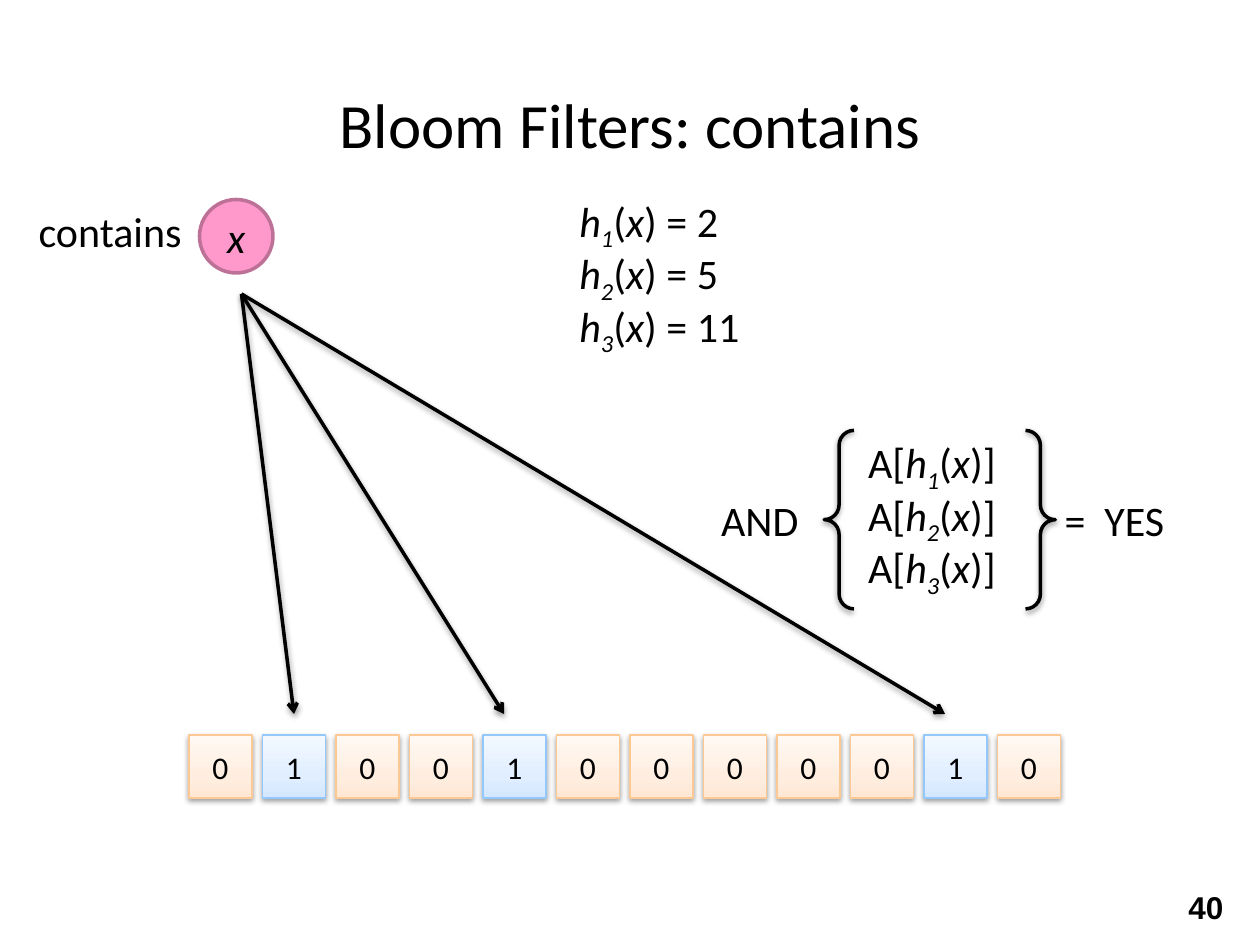
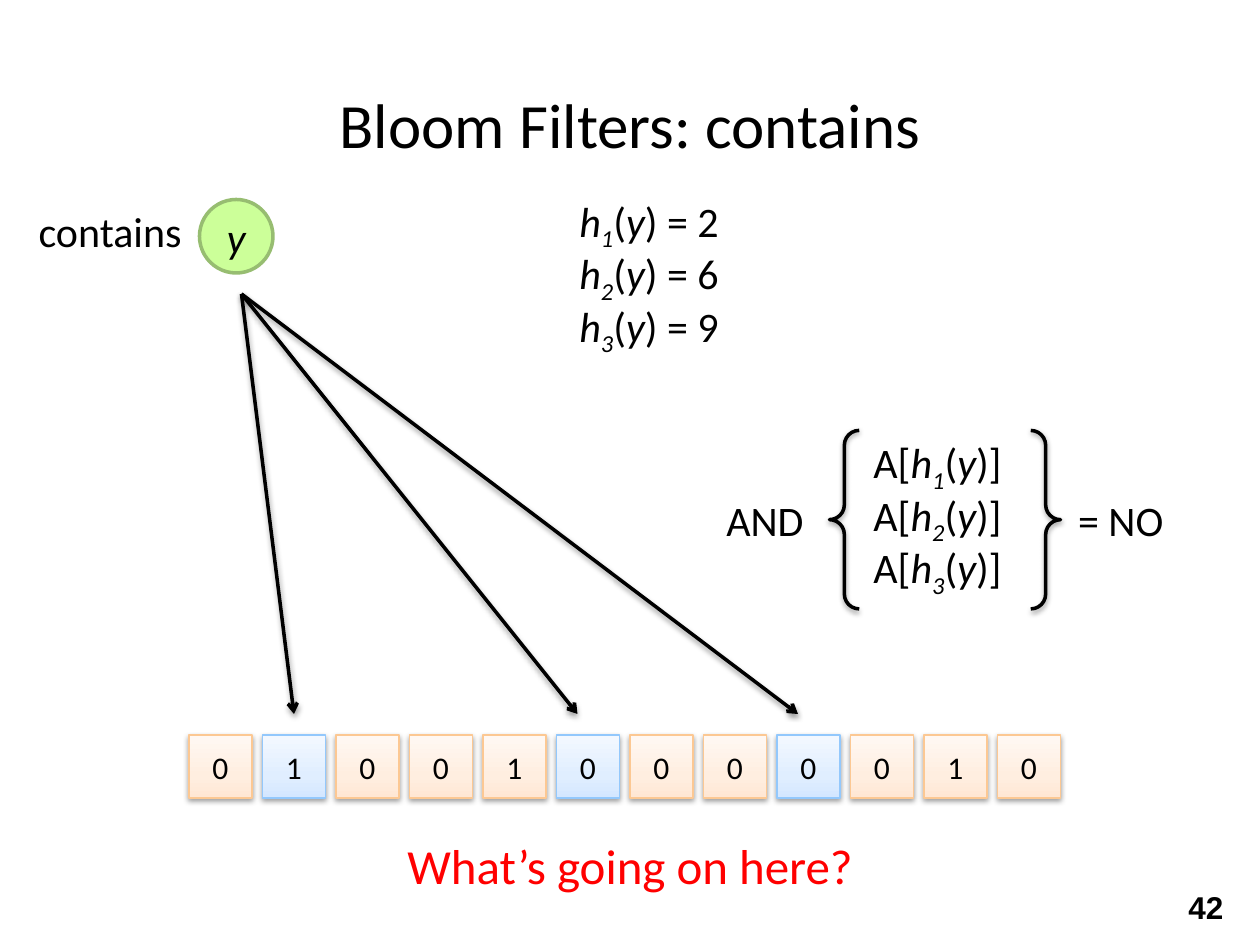
from pptx import Presentation
from pptx import util as u
from pptx.dml.color import RGBColor
from pptx.enum import shapes, text
from pptx.oxml import parse_xml
from pptx.oxml.ns import nsdecls

# The slide is a grid of 120 columns and 90 rows, each a twelfth of an inch.
COLUMNS, ROWS = 120, 90
UNIT = u.Inches(10) // COLUMNS

BLACK = RGBColor(0x00, 0x00, 0x00)
RED = RGBColor(0xFF, 0x00, 0x00)
PINK = RGBColor(0xFF, 0x99, 0xCC)
PINK_EDGE = RGBColor(0xBD, 0x71, 0x97)
LIME = RGBColor(0xCC, 0xFF, 0x99)
LIME_EDGE = RGBColor(0x97, 0xBD, 0x71)
ORANGE_EDGE = RGBColor(0xFC, 0xC8, 0x93)
BLUE_EDGE = RGBColor(0x93, 0xC8, 0xFC)
ORANGE_TINTS = [RGBColor(0xFF, 0xE7, 0xD4), RGBColor(0xFF, 0xEE, 0xE0), RGBColor(0xFF, 0xF8, 0xF3)]
BLUE_TINTS = [RGBColor(0xD4, 0xE7, 0xFF), RGBColor(0xE0, 0xEE, 0xFF), RGBColor(0xF3, 0xF8, 0xFF)]
TINT_STOPS = [0, 35, 100]

CENTER = text.PP_ALIGN.CENTER
MIDDLE = text.MSO_ANCHOR.MIDDLE
BITS = "010010000010"


def grid(*counts):
    return [u.Emu(round(count * UNIT)) for count in counts]


def write(frame, spans, size=24, font="Calibri", color=BLACK, bold=False,
          align=None, anchor=None, tabs=()):
    """Fill a frame with one paragraph; a span is (words, style), style "i" italic, "s" subscript."""
    frame.word_wrap = True
    if anchor is not None:
        frame.vertical_anchor = anchor
    para = frame.paragraphs[0]
    para.alignment = align
    if tabs:
        stops = "".join(f'<a:tab pos="{stop}" algn="l"/>' for stop in grid(*tabs))
        para._p.get_or_add_pPr().append(parse_xml(f'<a:tabLst {nsdecls("a")}>{stops}</a:tabLst>'))
    for words, style in [(spans, "")] if isinstance(spans, str) else spans:
        span = para.add_run()
        span.text = words
        span.font.size = u.Pt(size)
        span.font.name = font
        span.font.bold = bold
        span.font.italic = style in ("i", "s")
        span.font.color.rgb = color
        if style == "s":
            span.font._element.set("baseline", "-25000")


def add_text(page, box, spans, **style):
    write(page.shapes.add_textbox(*grid(*box)).text_frame, spans, **style)


def set_line(shape, color, width):
    shape.line.color.rgb = color
    shape.line.width = u.Pt(width)


def cast_shadow(shape):
    shape._element.spPr.append(parse_xml(
        f'<a:effectLst {nsdecls("a")}><a:outerShdw blurRad="40000" dist="20000" dir="5400000" '
        'rotWithShape="0"><a:srgbClr val="000000"><a:alpha val="38000"/></a:srgbClr>'
        '</a:outerShdw></a:effectLst>'))


def fill_upwards(shape, tints):
    """Give a shape a gradient that runs from its bottom edge to its top."""
    stops = "".join(f'<a:gs pos="{stop * 1000}"><a:srgbClr val="{tint}"/></a:gs>'
                    for stop, tint in zip(TINT_STOPS, tints))
    shape._element.spPr.append(parse_xml(
        f'<a:gradFill rotWithShape="1" {nsdecls("a")}><a:gsLst>{stops}</a:gsLst>'
        '<a:lin ang="16200000" scaled="0"/></a:gradFill>'))


def hash_call(number, key):
    return [("h", "i"), (str(number), "s"), ("(", ""), (key, "i")]


def add_bit_array(page, left, top, probed, side=6, pitch=7):
    for index, bit in enumerate(BITS):
        box = grid(left + index * pitch, top, side, side)
        cell = page.shapes.add_shape(shapes.MSO_SHAPE.RECTANGLE, *box)
        hit = index + 1 in probed
        fill_upwards(cell, BLUE_TINTS if hit else ORANGE_TINTS)
        set_line(cell, BLUE_EDGE if hit else ORANGE_EDGE, 0.75)
        cast_shadow(cell)
        write(cell.text_frame, bit, size=18, align=CENTER, anchor=MIDDLE)


def add_query(page, left, top, key, fill, edge):
    ball = page.shapes.add_shape(shapes.MSO_SHAPE.OVAL, *grid(left + 17, top, 7, 7))
    ball.shadow.inherit = False
    ball.fill.solid()
    ball.fill.fore_color.rgb = fill
    set_line(ball, edge, 2)
    write(ball.text_frame, [(key, "i")], align=CENTER, anchor=MIDDLE)
    add_text(page, (left, top, 17, 6), "contains", align=CENTER)


def add_hash_values(page, left, top, key, values):
    for number, value in enumerate(values, 1):
        add_text(page, (left, top + 5 * (number - 1), 19, 6),
                 hash_call(number, key) + [(f") = {value}", "")])


def add_probe_arrows(page, left, top, tips, bottom):
    for tip in tips:
        arrow = page.shapes.add_connector(shapes.MSO_CONNECTOR.STRAIGHT,
                                          *grid(left, top, tip, bottom))
        set_line(arrow, BLACK, 2)
        arrow.line._get_or_add_ln().append(parse_xml(f'<a:tailEnd type="arrow" {nsdecls("a")}/>'))
        cast_shadow(arrow)


def add_verdict(page, left, top, key, answer, tabs):
    """Show the AND of the probed bits, in braces, and its answer."""
    add_text(page, (left, top + 5.5, 47, 6), f"AND\t{answer}", tabs=tabs)
    brace = page.shapes.add_shape(shapes.MSO_SHAPE.DOUBLE_BRACE, *grid(left + 11, top, 22, 17))
    brace.fill.background()
    set_line(brace, BLACK, 2)
    cast_shadow(brace)
    for number in (1, 2, 3):
        add_text(page, (left + 14, top + 5 * (number - 1), 19, 6),
                 [("A[", "")] + hash_call(number, key) + [(")]", "")])


def add_lookup_page(deck, number, key, fill, edge, tips, answer, verdict_left, tabs, question=None):
    """Draw one lookup; tips maps each probed cell to the column its arrow ends at."""
    page = deck.slides.add_slide(deck.slide_layouts[6])
    add_bit_array(page, 18, 70, tips)
    add_query(page, 2, 19, key, fill, edge)
    add_hash_values(page, 54, 18, key, tips)
    add_probe_arrows(page, 23, 28, tips.values(), 68)
    if question:
        add_text(page, (0, 79, COLUMNS, 7), question, size=28, color=RED, align=CENTER)
    add_verdict(page, verdict_left, 41, key, answer, tabs)
    add_text(page, (0, 7.2, COLUMNS, 9), "Bloom Filters: contains", size=36,
             align=CENTER, anchor=MIDDLE)
    add_text(page, (112, 84, 7, 5), str(number), size=18, font="Arial", bold=True)


def main():
    deck = Presentation()
    deck.slide_width, deck.slide_height = grid(COLUMNS, ROWS)
    add_lookup_page(deck, 40, "x", PINK, PINK_EDGE, {2: 28, 5: 48, 11: 90},
                    "=\tYES", 67.5, (32.7, 36.5))
    add_lookup_page(deck, 42, "y", LIME, LIME_EDGE, {2: 28, 6: 55, 9: 76},
                    "= NO", 68, (33.5,), "What’s going on here?")
    deck.save("out.pptx")


if __name__ == "__main__":
    main()
